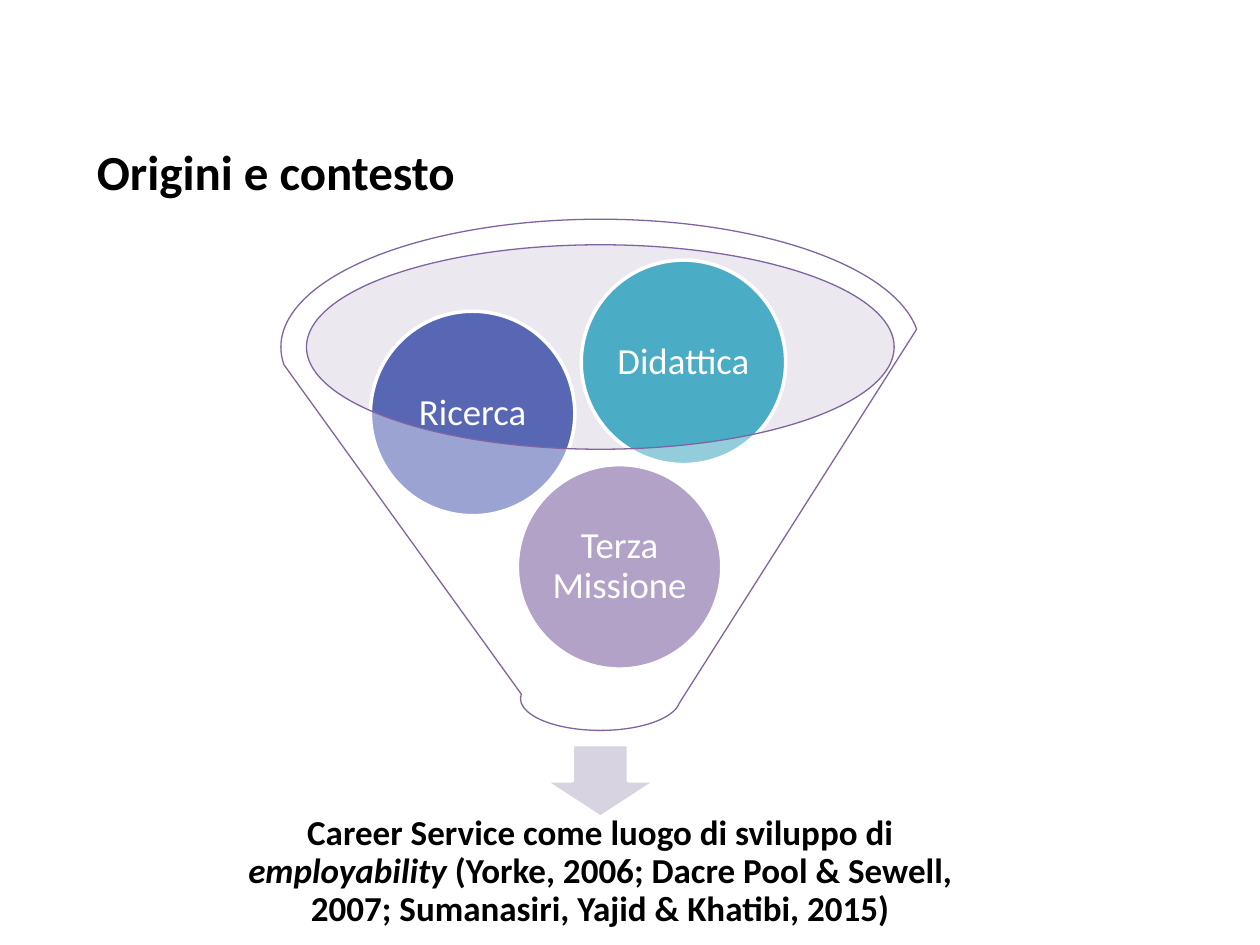
from lxml import etree
from pptx import Presentation
from pptx import util as u
from pptx.dml.color import RGBColor
from pptx.enum import shapes, text
from pptx.oxml.ns import qn

WIDE, HIGH = 10, 7.5
KIND = shapes.MSO_SHAPE
ALIGN = text.PP_ALIGN
MID = text.MSO_ANCHOR.MIDDLE
DISCS = [
    ("Terza Missione", "8064A2", 0.37, 0.48),
    ("Ricerca", "5767B4", 0.14, 0.18),
    ("Didattica", "4BACC6", 0.47, 0.08),
]
GOAL = [
    ("Career Service come luogo di sviluppo di ", False),
    ("employability ", True),
    ("(Yorke, 2006; Dacre Pool & Sewell, 2007; "
     "Sumanasiri, Yajid & Khatibi, 2015)", False),
]


def color(code):
    """Turn a hex string into a colour."""
    return RGBColor.from_string(code)


def part(box, x, y, w, h):
    """Return the box found at the given shares of another box."""
    left, top, wide, high = box
    return left + x * wide, top + y * high, w * wide, h * high


def apply(item, form):
    """Set each attribute named in a dict of format values."""
    for name, value in form.items():
        setattr(item, name, value)


def draw(slide, kind, box, fill, line=None, width=2, alpha=None):
    """Add a preset shape with flat fill, optional line and opacity."""
    shape = slide.shapes.add_shape(kind, *map(u.Inches, box))
    shape.shadow.inherit = False
    shape.fill.solid()
    shape.fill.fore_color.rgb = color(fill)
    if alpha:
        tone = shape.fill._xPr.find(qn("a:solidFill"))[0]
        etree.SubElement(tone, qn("a:alpha")).set("val", str(alpha * 1000))
    if line:
        shape.line.color.rgb = color(line)
        shape.line.width = u.Pt(width)
    else:
        shape.line.fill.background()
    return shape


def write(frame, runs, size, ink, para, inset=None, **form):
    """Fill a text frame with one paragraph of runs."""
    apply(frame, {"word_wrap": True, **form})
    if inset is not None:
        sides = ("left", "top", "right", "bottom")
        apply(frame, {f"margin_{side}": u.Inches(inset) for side in sides})
    line = frame.paragraphs[0]
    apply(line, para)
    for words, font in runs:
        run = line.add_run()
        run.text = words
        apply(run.font, {"name": "Calibri", "size": u.Pt(size), **font})
        run.font.color.rgb = color(ink)


def label(slide, box, *args, **form):
    """Add a text box."""
    item = slide.shapes.add_textbox(*map(u.Inches, box))
    write(item.text_frame, *args, **form)


def title(slide, box):
    """Place the heading."""
    label(slide, box, [("Origini e contesto", {"bold": True})], 28, "000000",
          {"alignment": ALIGN.JUSTIFY})


def funnel(slide, box):
    """Place the mouth, the discs and the funnel around them."""
    draw(slide, KIND.OVAL, part(box, 0.04, 0.05, 0.92, 0.4), "CDC6D7", alpha=40)
    for name, fill, x, y in DISCS:
        disc = draw(slide, KIND.OVAL, part(box, x, y, 0.32, 0.4), fill, "FFFFFF")
        write(disc.text_frame, [(name, {})], 21, "FFFFFF",
              {"alignment": ALIGN.CENTER, "line_spacing": 0.9},
              inset=0.03, vertical_anchor=MID)
    draw(slide, KIND.FUNNEL, box, "FFFFFF", "8064A2", 0.75, alpha=40)


def result(slide, box):
    """Place the arrow and the outcome below it."""
    draw(slide, KIND.DOWN_ARROW, part(box, 0.43, 0, 0.14, 0.37), "D8D3E0", "FFFFFF")
    runs = [(words, {"bold": True, "italic": slant}) for words, slant in GOAL]
    label(slide, part(box, 0, 0.3, 1, 0.7), runs, 20, "000000",
          {"alignment": ALIGN.CENTER, "line_spacing": 0.9},
          inset=0.16, vertical_anchor=MID)


def main():
    """Build and save the slide."""
    deck = Presentation()
    deck.slide_width, deck.slide_height = u.Inches(WIDE), u.Inches(HIGH)
    slide = deck.slides.add_slide(deck.slide_layouts[6])
    page = (0, 0, WIDE, HIGH)
    title(slide, part(page, 0.067, 0.143, 0.882, 0.13))
    funnel(slide, part(page, 0.223, 0.232, 0.507, 0.541))
    result(slide, part(page, 0.16, 0.788, 0.633, 0.208))
    deck.save("out.pptx")


if __name__ == "__main__":
    main()
